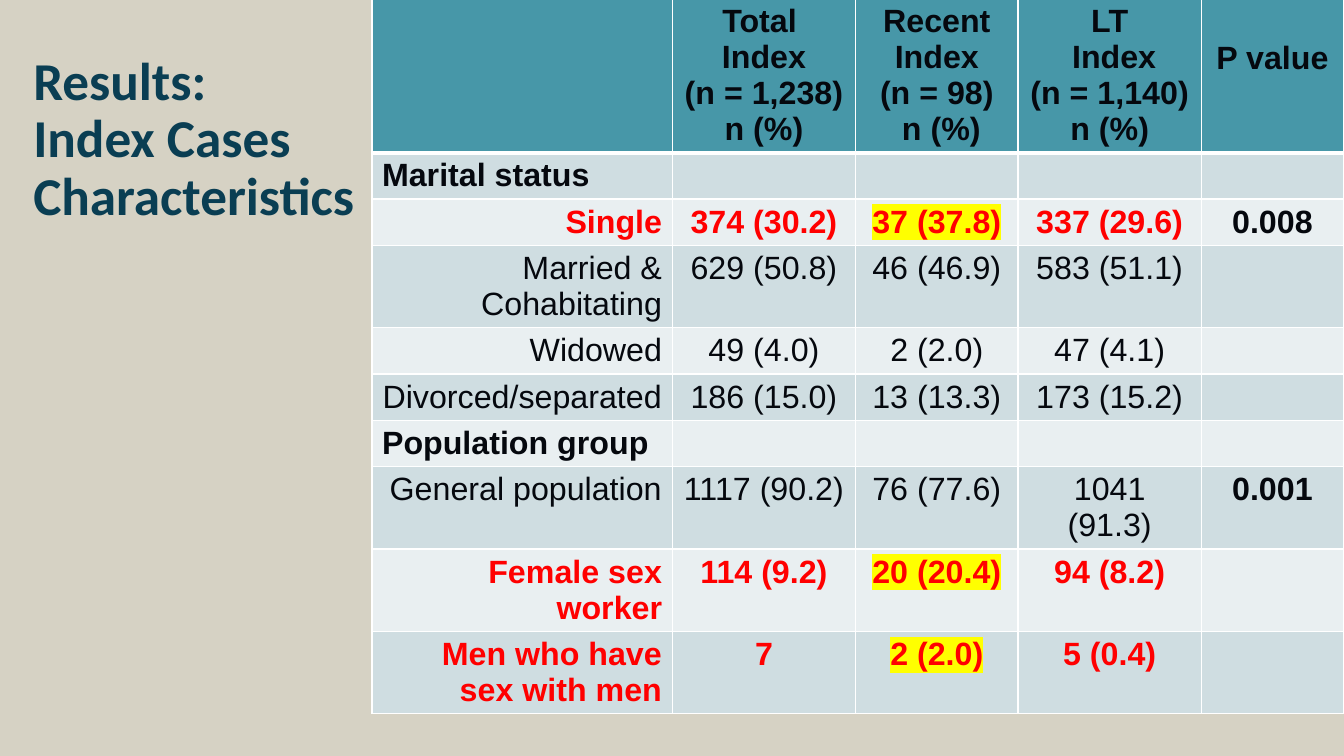
import pptx
import pptx.dml.color
import pptx.enum.text
import pptx.oxml
import pptx.oxml.ns
import pptx.util
from dataclasses import dataclass

Pt = pptx.util.Pt
ALIGN = pptx.enum.text.PP_ALIGN
ANCHOR = pptx.enum.text.MSO_ANCHOR


@dataclass(frozen=True)
class Theme:
    background: str = "D6D2C4"
    title: str = "0A3E53"
    ink: str = "05080E"
    emphasis: str = "FF0000"
    highlight: str = "FFFF00"
    header: str = "4797A8"
    bands: tuple = ("CFDDE1", "E9EFF1")
    border: str = "FFFFFF"
    title_font: str = "Calibri"
    table_font: str = "Arial"
    title_size: int = 38
    table_size: int = 23


THEME = Theme()

TITLE_LINES = ["Results:", "Index Cases ", "Characteristics"]
HEADINGS = [
    [],
    ["Total ", "Index", "(n = 1,238)", "n (%)"],
    ["Recent Index", "(n = 98)", " n (%)"],
    ["LT", " Index", "(n = 1,140) ", "n (%)"],
    ["P value"],
]
# Kind of row, then label, total, recent, long-term and P value
ROWS = [
    ("group", "Marital status", "", "", "", ""),
    ("key", "Single", "374 (30.2)", "37 (37.8)", "337 (29.6)", "0.008"),
    ("plain", "Married & Cohabitating", "629 (50.8)", "46 (46.9)", "583 (51.1)", ""),
    ("plain", "Widowed", "49 (4.0)", "2 (2.0)", "47 (4.1)", ""),
    ("plain", "Divorced/separated", "186 (15.0)", "13 (13.3)", "173 (15.2)", ""),
    ("group", "Population group", "", "", "", ""),
    ("plain", "General population", "1117 (90.2)", "76 (77.6)", "1041 (91.3)", "0.001"),
    ("key", "Female sex worker", "114 (9.2)", "20 (20.4)", "94 (8.2)", ""),
    ("key", "Men who have sex with men", "7", "2 (2.0)", "5 (0.4)", ""),
]
LABEL, RECENT, P_VALUE = 0, 2, 4
COLUMN_WIDTHS = [214.56, 131.04, 115.92, 131.04, 101.52]
HEADER_HEIGHT, ONE_LINE, TWO_LINES = 110, 33, 58.5
TWO_LINE_ROWS = {3, 7, 8, 9}
HEADER_LINE = 26.4


def rgb(colour):
    return pptx.dml.color.RGBColor.from_string(colour)


def add_run(paragraph, text, font, size, colour, bold):
    run = paragraph.add_run()
    run.text = text
    run.font.name = font
    run.font.size = Pt(size)
    run.font.bold = bold
    run.font.color.rgb = rgb(colour)
    return run


def highlight(run):
    mark = pptx.oxml.parse_xml(
        f'<a:highlight {pptx.oxml.ns.nsdecls("a")}>'
        f'<a:srgbClr val="{THEME.highlight}"/></a:highlight>')
    run.font.fill._xPr.find(pptx.oxml.ns.qn("a:solidFill")).addnext(mark)


def style_cell(cell, fill, bottom=1):
    """Give the cell white borders, then its fill; bottom is a width in points."""
    for side, width in (("L", 1), ("R", 1), ("T", 1), ("B", bottom)):
        cell._tc.get_or_add_tcPr().append(pptx.oxml.parse_xml(
            f'<a:ln{side} {pptx.oxml.ns.nsdecls("a")} w="{Pt(width)}">'
            f'<a:solidFill><a:srgbClr val="{THEME.border}"/></a:solidFill></a:ln{side}>'))
    cell.fill.solid()
    cell.fill.fore_color.rgb = rgb(fill)


def write_cell(cell, lines, align, colour, bold):
    """Write one paragraph per line and return the runs."""
    runs = []
    for i, line in enumerate(lines):
        frame = cell.text_frame
        paragraph = frame.add_paragraph() if i else frame.paragraphs[0]
        paragraph.alignment = align
        runs.append(add_run(paragraph, line, THEME.table_font,
                            THEME.table_size, colour, bold))
    return runs


def add_title(slide):
    title = slide.shapes.title
    title.left, title.top, title.width, title.height = Pt(16.56), Pt(69.84), Pt(249.12), Pt(61.2)
    frame = title.text_frame
    frame.word_wrap = True
    frame.auto_size = pptx.enum.text.MSO_AUTO_SIZE.NONE
    frame.vertical_anchor = ANCHOR.MIDDLE
    paragraph = frame.paragraphs[0]
    paragraph.alignment = ALIGN.LEFT
    paragraph.line_spacing = 0.9
    for i, line in enumerate(TITLE_LINES):
        if i:
            paragraph.add_line_break()
        add_run(paragraph, line, THEME.title_font, THEME.title_size, THEME.title, True)


def fill_header(table):
    for cell, lines in zip(table.rows[0].cells, HEADINGS):
        style_cell(cell, THEME.header, bottom=3)
        write_cell(cell, lines, ALIGN.CENTER, THEME.ink, True)
    # The single-line heading sits on the second line of its neighbours
    table.cell(0, P_VALUE).margin_top = Pt(3.6 + HEADER_LINE)


def fill_row(table, number, kind, texts):
    for column, text in enumerate(texts):
        cell = table.cell(number, column)
        style_cell(cell, THEME.bands[(number - 1) % 2])
        if not text:
            continue
        align = ALIGN.CENTER
        if column == LABEL:
            align = ALIGN.LEFT if kind == "group" else ALIGN.RIGHT
        emphasised = kind == "key" and column != P_VALUE
        colour = THEME.emphasis if emphasised else THEME.ink
        runs = write_cell(cell, [text], align, colour, kind != "plain" or column == P_VALUE)
        if emphasised and column == RECENT:
            highlight(runs[0])


def add_characteristics_table(slide):
    heights = [HEADER_HEIGHT] + [TWO_LINES if n in TWO_LINE_ROWS else ONE_LINE
                                 for n in range(1, len(ROWS) + 1)]
    table = slide.shapes.add_table(
        len(heights), len(COLUMN_WIDTHS), Pt(265.68), Pt(-1.44),
        Pt(sum(COLUMN_WIDTHS)), Pt(sum(heights))).table
    for column, width in zip(table.columns, COLUMN_WIDTHS):
        column.width = Pt(width)
    for row, height in zip(table.rows, heights):
        row.height = Pt(height)
    fill_header(table)
    for number, (kind, *texts) in enumerate(ROWS, 1):
        fill_row(table, number, kind, texts)


def main():
    deck = pptx.Presentation()
    deck.slide_width, deck.slide_height = Pt(960), Pt(540)
    slide = deck.slides.add_slide(deck.slide_layouts.get_by_name("Title Only"))
    slide.background.fill.solid()
    slide.background.fill.fore_color.rgb = rgb(THEME.background)
    add_title(slide)
    add_characteristics_table(slide)
    deck.save("out.pptx")


if __name__ == "__main__":
    main()
